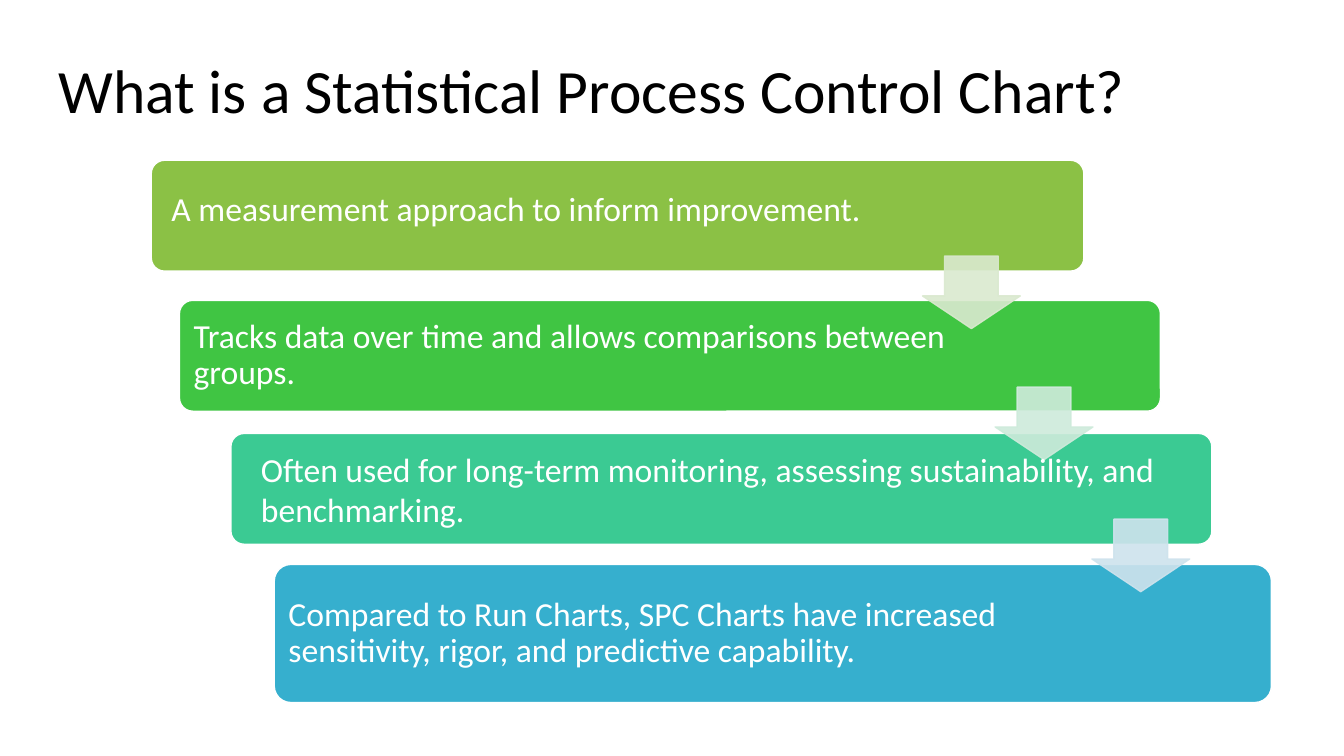
"""Build a slide of four cascading steps that explain control charts."""
import pptx
import pptx.dml.color
import pptx.enum.shapes
import pptx.enum.text
import pptx.oxml
import pptx.oxml.ns
import pptx.util

Inches = pptx.util.Inches
Pt = pptx.util.Pt
RGBColor = pptx.dml.color.RGBColor
Shape = pptx.enum.shapes.MSO_SHAPE
Anchor = pptx.enum.text.MSO_ANCHOR

BLACK = RGBColor(0x00, 0x00, 0x00)
WHITE = RGBColor(0xFF, 0xFF, 0xFF)
OLIVE = RGBColor(0x8B, 0xC1, 0x45)
GREEN = RGBColor(0x40, 0xC5, 0x43)
TEAL = RGBColor(0x3B, 0xCA, 0x93)
BLUE = RGBColor(0x36, 0xAF, 0xCE)
PALE_OLIVE = RGBColor(0xDA, 0xE9, 0xCF)
PALE_TEAL = RGBColor(0xCE, 0xEB, 0xDB)
PALE_BLUE = RGBColor(0xCE, 0xE3, 0xED)

FONT = "Calibri"
CORNER = 0.12
CORNER_INSET = 0.29 * CORNER
STEP_MARGINS = (0.14, 0.14, 1.49, 0.14)
STEPS = [
    ((1.5, 1.59, 9.25, 1.1), OLIVE, (0.2, 0, 0.6, 0.14),
     "A measurement approach to inform improvement."),
    ((1.78, 2.98, 9.73, 1.1), GREEN, STEP_MARGINS,
     "Tracks data over time and allows comparisons between groups."),
    ((2.29, 4.3, 9.73, 1.1), TEAL, STEP_MARGINS, ""),
    ((2.72, 5.6, 9.89, 1.37), BLUE, STEP_MARGINS,
     "Compared to Run Charts, SPC Charts have increased sensitivity, "
     "rigor, and predictive capability."),
]
ARROW_SIZE = (0.97, 0.72)
ARROWS = [
    ((9.15, 2.54), PALE_OLIVE),
    ((9.87, 3.84), PALE_TEAL),
    ((10.83, 5.15), PALE_BLUE),
]


def write_text(shape, text, size, color, line_spacing=None):
    """Put one left-aligned paragraph into a shape."""
    shape.text_frame.word_wrap = True
    para = shape.text_frame.paragraphs[0]
    para.text = text
    para.alignment = pptx.enum.text.PP_ALIGN.LEFT
    para.line_spacing = line_spacing
    para.font.name = FONT
    para.font.size = Pt(size)
    para.font.color.rgb = color
    return para


def add_text(slide, box, text, size, color, line_spacing=None):
    """Add a text box and return it."""
    shape = slide.shapes.add_textbox(*map(Inches, box))
    write_text(shape, text, size, color, line_spacing)
    return shape


def add_title(slide, box, text):
    """Add the slide heading, resting on the bottom of its box."""
    title = add_text(slide, box, text, 44, BLACK, 0.9)
    title.text_frame.vertical_anchor = Anchor.BOTTOM
    title.text_frame.paragraphs[0].space_after = Pt(6)


def add_solid(slide, kind, box, fill, line):
    """Add a flat preset shape with a solid fill and a thin outline."""
    shape = slide.shapes.add_shape(kind, *map(Inches, box))
    shape.shadow.inherit = False
    shape.fill.solid()
    shape.fill.fore_color.rgb = fill
    shape.line.color.rgb = line
    shape.line.width = Pt(1)
    return shape


def add_step(slide, box, color, margins, text):
    """Add one rounded step, with margins measured from its outer edges."""
    step = add_solid(slide, Shape.ROUNDED_RECTANGLE, box, color, WHITE)
    step.adjustments[0] = CORNER
    if not text:
        return
    inset = CORNER_INSET * box[3]
    frame = step.text_frame
    frame.margin_left, frame.margin_top, frame.margin_right, frame.margin_bottom = [
        Inches(max(margin - inset, 0)) for margin in margins]
    frame.vertical_anchor = Anchor.MIDDLE
    write_text(step, text, 24, WHITE, 0.9)


def add_arrow(slide, box, color):
    """Add a slightly transparent down arrow between two steps."""
    arrow = add_solid(slide, Shape.DOWN_ARROW, box, color, color)
    arrow.adjustments[0] = 0.55
    arrow.adjustments[1] = 0.45
    properties = arrow.fill._xPr
    for tint in properties.iter(pptx.oxml.ns.qn("a:srgbClr")):
        alpha = pptx.oxml.parse_xml(
            f'<a:alpha {pptx.oxml.ns.nsdecls("a")} val="90000"/>')
        tint.append(alpha)


def main():
    """Build and save the deck."""
    deck = pptx.Presentation()
    deck.slide_width = Inches(13.33)
    deck.slide_height = Inches(7.5)
    page = deck.slides.add_slide(deck.slide_layouts[6])
    add_title(page, (0.48, 0.53, 11.99, 0.78),
              "What is a Statistical Process Control Chart?")
    for step in STEPS:
        add_step(page, *step)
    for corner, color in ARROWS:
        add_arrow(page, corner + ARROW_SIZE, color)
    add_text(page, (2.49, 4.4, 9.22, 0.91),
             "Often used for long-term monitoring, assessing sustainability, "
             "and benchmarking.", 24, WHITE)
    deck.save("out.pptx")


if __name__ == "__main__":
    main()
